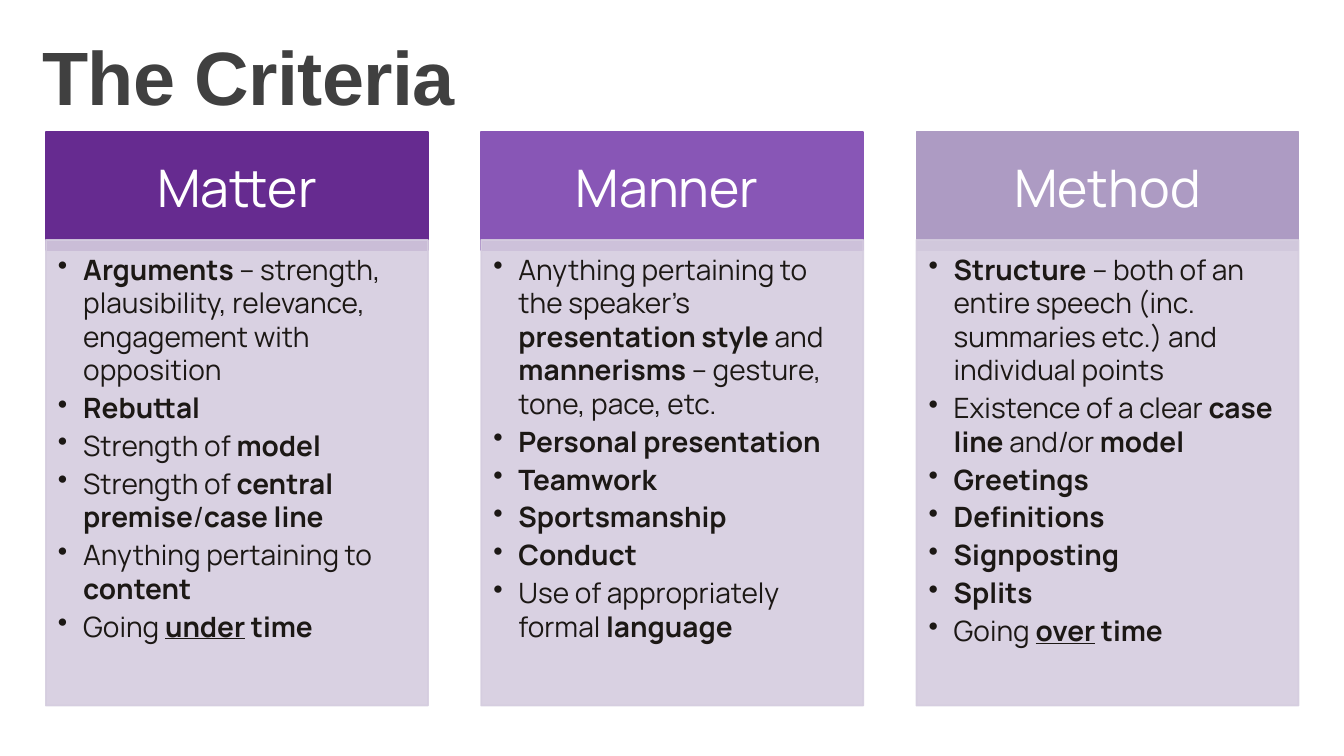
from dataclasses import dataclass

from pptx import Presentation
from pptx.dml.color import RGBColor as RGB
from pptx.enum.shapes import MSO_SHAPE as Preset
from pptx.enum.text import MSO_ANCHOR as Anchor, MSO_AUTO_SIZE as AutoSize, PP_ALIGN as Align
from pptx.oxml.ns import qn
from pptx.oxml.xmlchemy import OxmlElement
from pptx.util import Inches, Pt

TITLE = "The Criteria"
# *asterisks* mark bold text; a bold part that starts with _ is also underlined
CRITERIA = [
    ("Matter", "662B90", [
        "*Arguments* – strength, plausibility, relevance, engagement with opposition",
        "*Rebuttal*",
        "Strength of *model*",
        "Strength of *central premise*/*case line*",
        "Anything pertaining to *content*",
        "Going *_under* *time*",
    ]),
    ("Manner ", "8856B6", [
        "Anything pertaining to the speaker’s *presentation style* and *mannerisms*"
        " – gesture, tone, pace, etc.",
        "*Personal presentation*",
        "*Teamwork*",
        "*Sportsmanship*",
        "*Conduct*",
        "Use of appropriately formal *language*",
    ]),
    ("Method", "AD9BC3", [
        "*Structure* – both of an entire speech (inc. summaries etc.) and individual points",
        "Existence of a clear *case line* and/or *model*",
        "*Greetings*",
        "*Definitions*",
        "*Signposting*",
        "*Splits*",
        "Going *_over* *time*",
    ]),
]


@dataclass(frozen=True)
class Theme:
    title_font: str = "Arial"
    font: str = "Manrope"
    title_color: str = "404040"
    header_color: str = "FFFFFF"
    body_color: str = "1C1815"
    panel_color: str = "D5CDDF"
    panel_opacity: int = 90
    title_size: int = 54
    header_size: int = 37
    body_size: int = 20
    line_width: float = 1.25


THEME = Theme()
LEFT, PITCH, WIDTH = 0.455, 4.317, 3.79
HEADER_TOP, HEADER_HEIGHT = 1.31, 1.17
PANEL_TOP, PANEL_HEIGHT = 2.38, 4.62


def prepare_frame(frame, insets, anchor):
    frame.word_wrap = True
    frame.auto_size = AutoSize.NONE
    frame.vertical_anchor = anchor
    (frame.margin_left, frame.margin_top,
     frame.margin_right, frame.margin_bottom) = map(Inches, insets)


def add_block(slide, left, top, height, color, opacity=100):
    block = slide.shapes.add_shape(
        Preset.RECTANGLE, Inches(left), Inches(top), Inches(WIDTH), Inches(height))
    block.shadow.inherit = False
    block.fill.solid()
    block.fill.fore_color.rgb = block.line.color.rgb = RGB.from_string(color)
    block.line.width = Pt(THEME.line_width)
    if opacity < 100:
        for tone in block.element.spPr.iter(qn("a:srgbClr")):
            alpha = OxmlElement("a:alpha")
            alpha.set("val", str(opacity * 1000))
            tone.append(alpha)
    return block


def add_bullet(para):
    props = para._p.get_or_add_pPr()
    props.set("marL", str(Inches(0.25)))
    props.set("indent", str(-Inches(0.25)))
    bullet = OxmlElement("a:buChar")
    bullet.set("char", "•")
    props.append(bullet)


def write(para, text, *, size, color, font=THEME.font, bold=False,
          align=Align.LEFT, line_spacing=1.0, after=0, tracking=None):
    """Fill a paragraph, turning the bold and underline marks into runs."""
    para.alignment = align
    para.line_spacing = line_spacing
    para.space_before, para.space_after = Pt(0), Pt(after)
    for index, part in enumerate(text.split("*")):
        if not part:
            continue
        span = para.add_run()
        span.text = part.removeprefix("_")
        span.font.name, span.font.size = font, Pt(size)
        span.font.color.rgb = RGB.from_string(color)
        span.font.bold = bold or index % 2 == 1
        span.font.underline = part.startswith("_")
        if tracking is not None:
            span.font._element.set("spc", str(round(tracking * 100)))


def add_column(slide, left, heading, color, points):
    header = add_block(slide, left, HEADER_TOP, HEADER_HEIGHT, color)
    prepare_frame(header.text_frame, (0.29, 0.16, 0.29, 0.16), Anchor.MIDDLE)
    write(header.text_frame.paragraphs[0], heading, size=THEME.header_size,
          color=THEME.header_color, align=Align.CENTER, line_spacing=0.9, after=13)

    panel = add_block(slide, left, PANEL_TOP, PANEL_HEIGHT,
                      THEME.panel_color, THEME.panel_opacity)
    frame = panel.text_frame
    prepare_frame(frame, (0.12, 0.12, 0.16, 0.17), Anchor.TOP)
    for index, point in enumerate(points):
        para = frame.add_paragraph() if index else frame.paragraphs[0]
        para.level = 1
        add_bullet(para)
        write(para, point, size=THEME.body_size, color=THEME.body_color, after=3)


def add_title(slide):
    title = slide.shapes.title
    title.left, title.top = Inches(0.32), Inches(0.3)
    title.width, title.height = Inches(11.48), Inches(1.83)
    prepare_frame(title.text_frame, (0.1, 0.1, 0.1, 0.1), Anchor.TOP)
    write(title.text_frame.paragraphs[0], TITLE, size=THEME.title_size,
          color=THEME.title_color, font=THEME.title_font, bold=True,
          line_spacing=0.9, tracking=-0.5)


def main():
    deck = Presentation()
    deck.slide_width, deck.slide_height = Inches(13.33), Inches(7.5)
    slide = deck.slides.add_slide(deck.slide_layouts.get_by_name("Title Only"))
    add_title(slide)
    for index, (heading, color, points) in enumerate(CRITERIA):
        add_column(slide, LEFT + index * PITCH, heading, color, points)
    deck.save("out.pptx")


if __name__ == "__main__":
    main()
